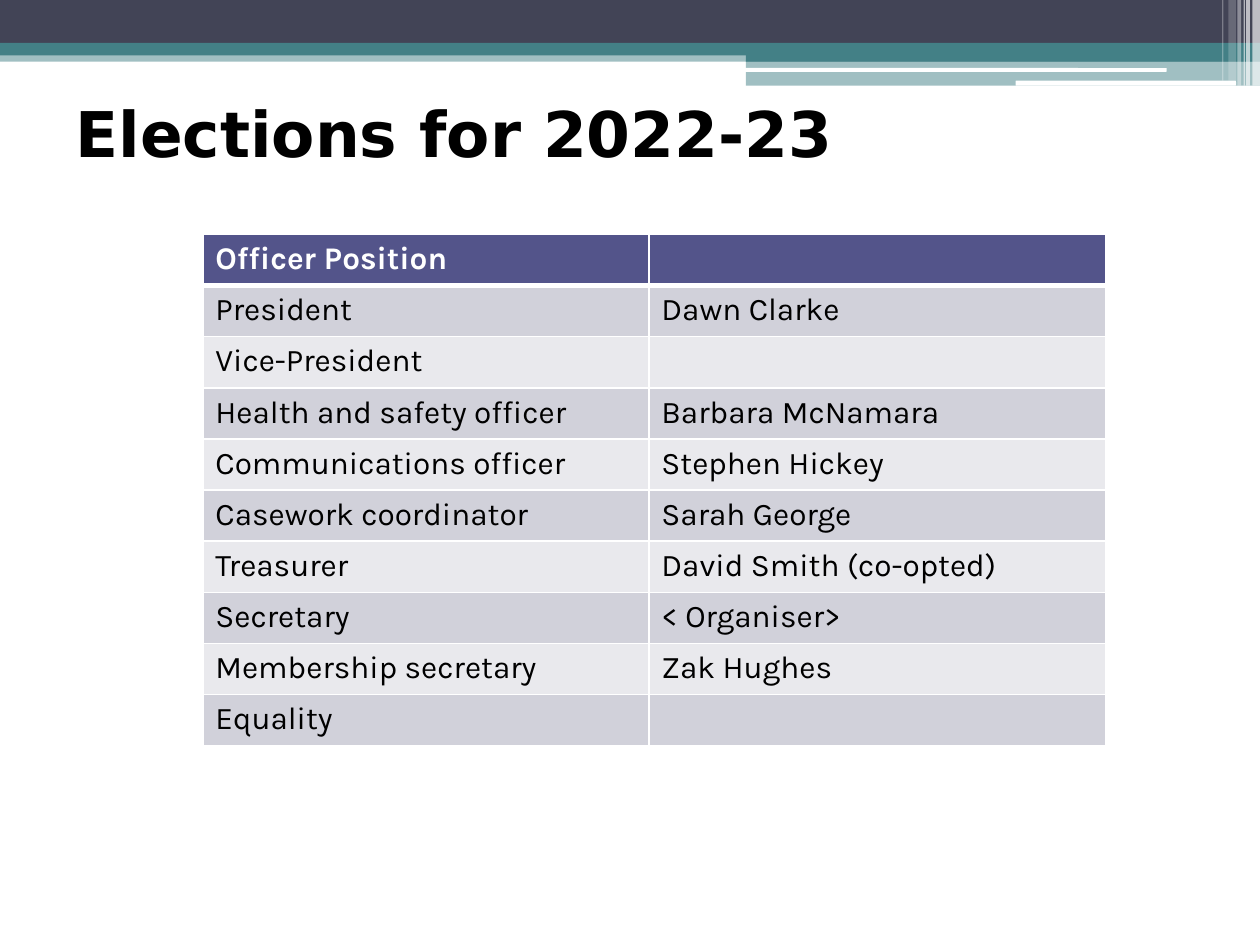
from pptx import Presentation
from pptx import util as u
from pptx.dml.color import RGBColor
from pptx.enum import shapes, text
from pptx.oxml import ns, xmlchemy

TITLE = "Elections for 2022-23"
OFFICERS = [
    ("Officer Position", ""),
    ("President", "Dawn Clarke"),
    ("Vice-President", ""),
    ("Health and safety officer", "Barbara McNamara"),
    ("Communications officer", "Stephen Hickey"),
    ("Casework coordinator", "Sarah George"),
    ("Treasurer", "David Smith (co-opted)"),
    ("Secretary", "< Organiser>"),
    ("Membership secretary", "Zak Hughes"),
    ("Equality", ""),
]
COLORS = {
    "white": "FFFFFF", "black": "000000", "slate": "424456", "teal": "438086",
    "header": "53548A", "odd": "D1D1DA", "even": "E9E9ED",
}
# Banner parts: left, top, width, height, colour, opacity in percent
BANDS = [
    (0, 0.4, 10, 0.09, "teal", 50),
    (0, 0, 10, 0.34, "slate", 100),
    (0, 0.34, 10, 0.1, "teal", 100),
    (5.92, 0.39, 4.08, 0.1, "teal", 100),
    (5.92, 0.48, 4.08, 0.2, "teal", 50),
]
ROUNDED_LINES = [
    (5.91, 0.54, 3.35, 0.03, "white", 100),
    (8.06, 0.64, 1.75, 0.04, "white", 100),
]
# Vertical stripes at the right edge: left, width, height, opacity
STRIPES = [
    (9.94, 0.06, 0.68, 65), (9.89, 0.03, 0.68, 65), (9.87, 0.01, 0.68, 60),
    (9.82, 0.03, 0.68, 40), (9.75, 0.06, 0.64, 20), (9.7, 0.01, 0.64, 30),
]
TABLE_LEFT, TABLE_TOP, TABLE_HEIGHT = 1.61, 1.86, 4.06
COLUMN_WIDTHS = (3.54, 3.63)


def color(name):
    return RGBColor.from_string(COLORS[name])


def add_bar(slide, kind, left, top, width, height, fill, opacity):
    shape = slide.shapes.add_shape(
        kind, *(u.Inches(length) for length in (left, top, width, height)))
    shape.shadow.inherit = False
    shape.line.fill.background()
    shape.fill.solid()
    shape.fill.fore_color.rgb = color(fill)
    if opacity < 100:
        rgb = shape.element.spPr.find(".//" + ns.qn("a:srgbClr"))
        alpha = xmlchemy.OxmlElement("a:alpha")
        alpha.set("val", str(opacity * 1000))
        rgb.append(alpha)


def add_border(cell, side, points):
    properties = cell._tc.get_or_add_tcPr()
    line = xmlchemy.OxmlElement(f"a:ln{side}")
    line.set("w", str(u.Pt(points)))
    fill = xmlchemy.OxmlElement("a:solidFill")
    rgb = xmlchemy.OxmlElement("a:srgbClr")
    rgb.set("val", COLORS["white"])
    fill.append(rgb)
    line.append(fill)
    properties.append(line)


def style_font(font, name, size, bold, font_color):
    font.name, font.size, font.bold = name, u.Pt(size), bold
    font.color.rgb = color(font_color)


def add_officer_table(slide):
    table = slide.shapes.add_table(
        len(OFFICERS), len(COLUMN_WIDTHS), u.Inches(TABLE_LEFT), u.Inches(TABLE_TOP),
        u.Inches(sum(COLUMN_WIDTHS)), u.Inches(TABLE_HEIGHT)).table
    for column, width in zip(table.columns, COLUMN_WIDTHS):
        column.width = u.Inches(width)
    for row, entries in enumerate(OFFICERS):
        is_header = row == 0
        fill = "header" if is_header else ("odd" if row % 2 else "even")
        for column, entry in enumerate(entries):
            cell = table.cell(row, column)
            cell.text = entry
            style_font(cell.text_frame.paragraphs[0].font, "Karla", 18,
                       is_header, "white" if is_header else "black")
            # A thick rule separates the header from the list
            widths = {"L": 1, "R": 1, "T": 3 if row == 1 else 1, "B": 3 if is_header else 1}
            for side, points in widths.items():
                add_border(cell, side, points)
            cell.fill.solid()
            cell.fill.fore_color.rgb = color(fill)


def main():
    presentation = Presentation()
    presentation.slide_width, presentation.slide_height = u.Inches(10), u.Inches(7.5)
    slide = presentation.slides.add_slide(presentation.slide_layouts[5])

    # Banner
    for band in BANDS:
        add_bar(slide, shapes.MSO_SHAPE.RECTANGLE, *band)
    for line in ROUNDED_LINES:
        add_bar(slide, shapes.MSO_SHAPE.ROUNDED_RECTANGLE, *line)
    for left, width, height, opacity in STRIPES:
        add_bar(slide, shapes.MSO_SHAPE.RECTANGLE, left, 0, width, height, "white", opacity)

    # Title
    title = slide.shapes.title
    title.left, title.top = u.Inches(0.5), u.Inches(0.68)
    title.width, title.height = u.Inches(9), u.Inches(0.74)
    title.text_frame.text = TITLE
    title.text_frame.vertical_anchor = text.MSO_ANCHOR.MIDDLE
    title.text_frame.auto_size = text.MSO_AUTO_SIZE.NONE
    paragraph = title.text_frame.paragraphs[0]
    paragraph.alignment = text.PP_ALIGN.LEFT
    style_font(paragraph.font, "DejaVu Sans", 36, True, "black")

    # Officers
    add_officer_table(slide)
    presentation.save("out.pptx")


if __name__ == "__main__":
    main()
